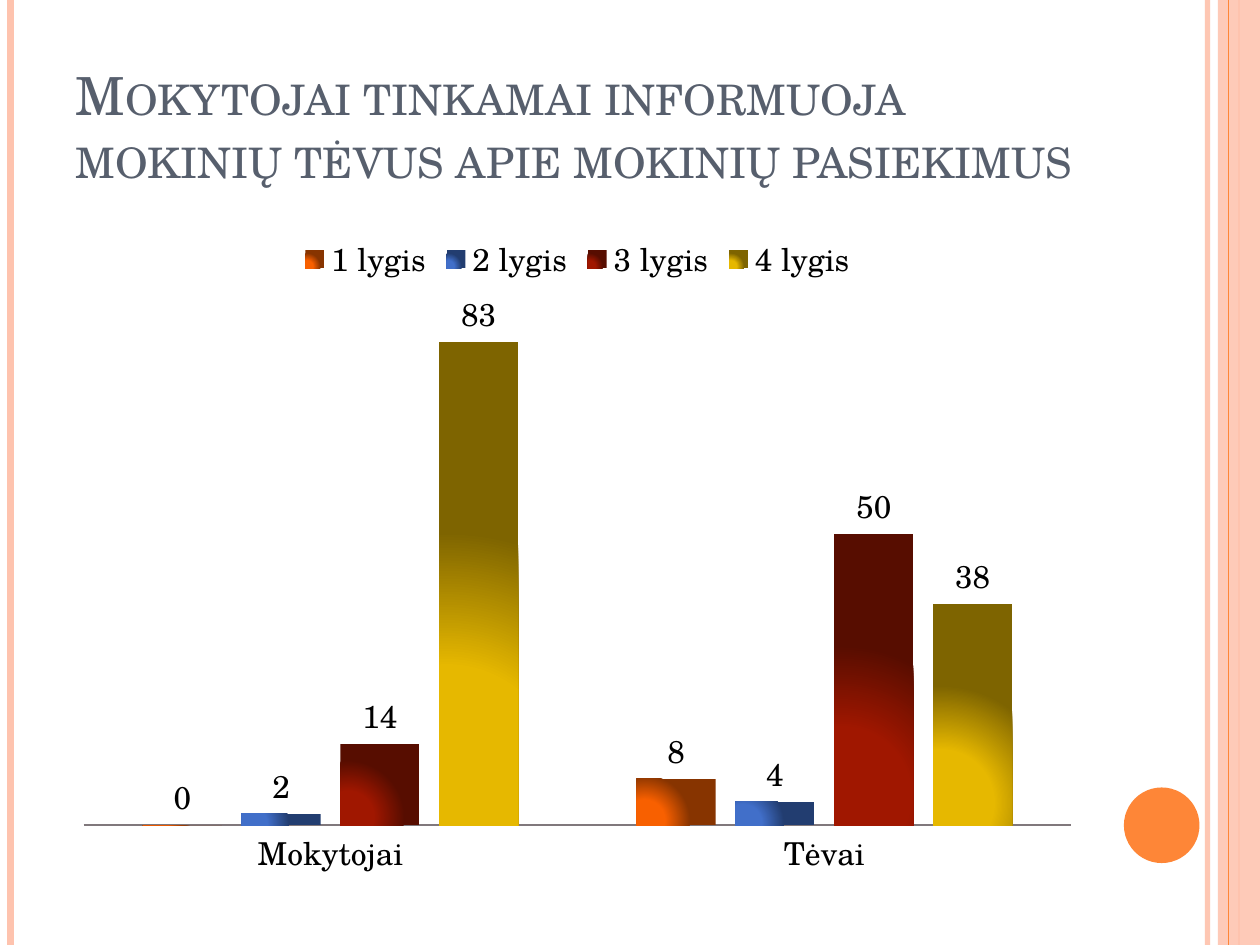
from lxml.etree import SubElement
from pptx import Presentation
from pptx.chart.data import CategoryChartData
from pptx.dml.color import RGBColor
from pptx.enum.chart import XL_CHART_TYPE, XL_LABEL_POSITION, XL_LEGEND_POSITION, XL_TICK_MARK
from pptx.enum.shapes import MSO_CONNECTOR, MSO_SHAPE
from pptx.enum.text import MSO_ANCHOR, PP_ALIGN
from pptx.oxml import parse_xml
from pptx.oxml.ns import nsdecls, qn
from pptx.util import Pt

FONT = "TeX Gyre Schola"
PINK = RGBColor(0xFE, 0xC3, 0xAE)
ORANGE = RGBColor(0xFE, 0x86, 0x37)
SLATE = RGBColor(0x57, 0x5F, 0x6D)
BLACK = RGBColor(0, 0, 0)
GREY = RGBColor(0x80, 0x78, 0x7C)

# Series name, values, bright and dark end of the gradient
SERIES = [
    ("1 lygis", (0, 8), RGBColor(0xF8, 0x60, 0x00), RGBColor(0x87, 0x34, 0x00)),
    ("2 lygis", (2, 4), RGBColor(0x41, 0x6F, 0xC9), RGBColor(0x22, 0x3D, 0x70)),
    ("3 lygis", (14, 50), RGBColor(0xA0, 0x17, 0x00), RGBColor(0x57, 0x0D, 0x00)),
    ("4 lygis", (83, 38), RGBColor(0xE6, 0xB8, 0x00), RGBColor(0x7E, 0x64, 0x00)),
]


def set_alpha(fill_parent, percent):
    color = next(fill_parent.iter(qn("a:srgbClr")))
    SubElement(color, qn("a:alpha")).set("val", str(percent * 1000))


def add_stripe(page, x, color, width, alpha=100):
    line = page.shapes.add_connector(MSO_CONNECTOR.STRAIGHT, Pt(x), Pt(0), Pt(x), Pt(540))
    line.line.color.rgb = color
    line.line.width = Pt(width)
    if alpha < 100:
        set_alpha(line.line._ln, alpha)
    SubElement(line._element.spPr, qn("a:effectLst"))


def add_solid(page, kind, left, top, width, height, color, alpha=100):
    shape = page.shapes.add_shape(kind, Pt(left), Pt(top), Pt(width), Pt(height))
    shape.shadow.inherit = False
    shape.fill.solid()
    shape.fill.fore_color.rgb = color
    shape.line.fill.background()
    if alpha < 100:
        set_alpha(shape._element.spPr, alpha)


def format_title(page, text):
    title = page.shapes.title
    title.left, title.top, title.width, title.height = Pt(36), Pt(21.6), Pt(588), Pt(90)
    frame = title.text_frame
    frame.text = text
    frame.word_wrap = True
    frame.vertical_anchor = MSO_ANCHOR.BOTTOM
    para = frame.paragraphs[0]
    para.alignment = PP_ALIGN.LEFT
    para.line_spacing = 1.0
    span = para.runs[0]
    span.font.name = FONT
    span.font.size = Pt(30)
    span.font.color.rgb = SLATE
    span._r.get_or_add_rPr().set("cap", "small")


def fill_radial(series, bright, dark):
    """Radial gradient growing from the lower left corner of each bar."""
    properties = series._element.get_or_add_spPr()
    properties.append(parse_xml(
        f'<a:gradFill {nsdecls("a")} rotWithShape="1"><a:gsLst>'
        f'<a:gs pos="0"><a:srgbClr val="{bright}"/></a:gs>'
        f'<a:gs pos="45000"><a:srgbClr val="{bright}"/></a:gs>'
        f'<a:gs pos="100000"><a:srgbClr val="{dark}"/></a:gs></a:gsLst>'
        '<a:path path="circle"><a:fillToRect l="10000" t="90000" r="90000" b="10000"/></a:path>'
        '</a:gradFill>'))


def set_layout(parent, after, x, y, width, height, inner=False):
    """Place a chart part by fractions of the chart area."""
    for old in parent.findall(qn("c:layout")):
        parent.remove(old)
    target = '<c:layoutTarget val="inner"/>' if inner else ""
    layout = parse_xml(
        f'<c:layout {nsdecls("c")}><c:manualLayout>{target}'
        '<c:xMode val="edge"/><c:yMode val="edge"/>'
        f'<c:x val="{x}"/><c:y val="{y}"/><c:w val="{width}"/><c:h val="{height}"/>'
        '</c:manualLayout></c:layout>')
    parent.insert(after, layout)


def add_level_chart(page):
    data = CategoryChartData(number_format="General")
    data.categories = ["Mokytojai", "Tėvai"]
    for name, values, _, _ in SERIES:
        data.add_series(name, values)
    chart = page.shapes.add_chart(XL_CHART_TYPE.COLUMN_CLUSTERED,
                                  Pt(36), Pt(126), Pt(588), Pt(384), data).chart
    chart.has_title = False
    chart.font.name = FONT
    chart.font.size = Pt(18)
    chart.font.color.rgb = BLACK

    # Legend and axes
    chart.has_legend = True
    chart.legend.position = XL_LEGEND_POSITION.TOP
    chart.legend.include_in_layout = False
    categories = chart.category_axis
    categories.major_tick_mark = XL_TICK_MARK.NONE
    categories.format.line.color.rgb = GREY
    categories.format.line.width = Pt(1)
    values = chart.value_axis
    values.minimum_scale, values.maximum_scale = 0, 90
    values.has_major_gridlines = False
    values.visible = False

    # Bars and their value labels
    plot = chart.plots[0]
    plot.vary_by_categories = False
    plot.gap_width = 150
    plot.overlap = -25
    for series, (_, _, bright, dark) in zip(plot.series, SERIES):
        fill_radial(series, bright, dark)
        labels = series.data_labels
        labels.show_value = True
        labels.position = XL_LABEL_POSITION.OUTSIDE_END
    set_layout(chart._chartSpace.chart.plotArea, 0, 0.02, 0.12, 0.96, 0.78, inner=True)


def main():
    deck = Presentation()
    deck.slide_width, deck.slide_height = Pt(720), Pt(540)
    page = deck.slides.add_slide(deck.slide_layouts[5])

    # Border stripes and the round ornament
    add_stripe(page, 690, PINK, 3, 93)
    add_stripe(page, 6, PINK, 4.5)
    add_stripe(page, 708, PINK, 1.5)
    add_solid(page, MSO_SHAPE.RECTANGLE, 696, 0, 24, 540, PINK, 87)
    add_stripe(page, 702, ORANGE, 0.75)
    add_solid(page, MSO_SHAPE.OVAL, 642.24, 450, 43.2, 43.2, ORANGE)

    # Title and chart
    format_title(page, "Mokytojai tinkamai informuoja mokinių tėvus apie mokinių pasiekimus")
    add_level_chart(page)
    deck.save("out.pptx")


if __name__ == "__main__":
    main()
